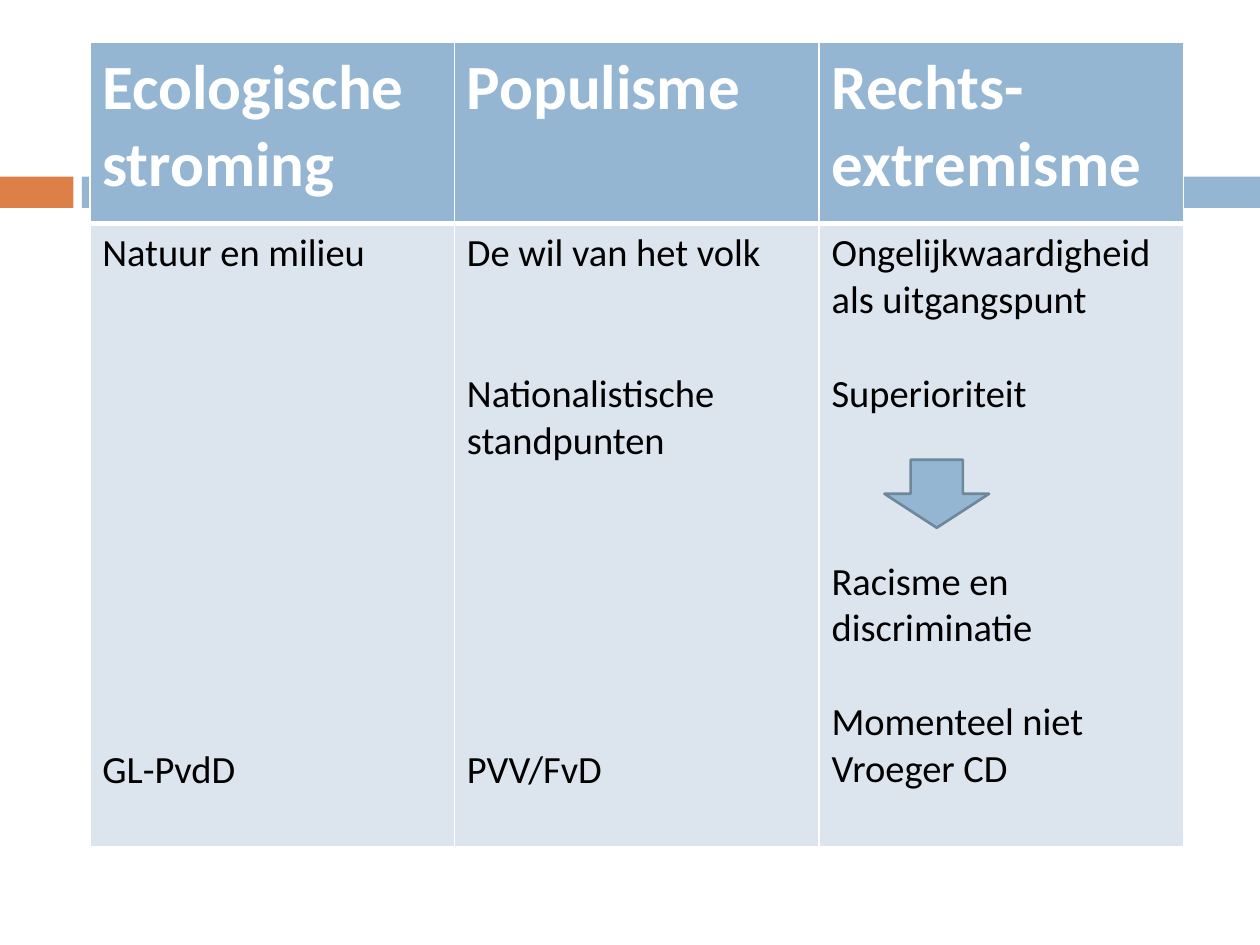
"""Build a slide that compares three political movements in a table."""
from lxml import etree
from pptx import Presentation
from pptx import util as u
from pptx.dml.color import RGBColor
from pptx.enum import shapes
from pptx.oxml import ns

COLORS = {"orange": "DD8047", "blue": "94B6D2", "pale": "DCE5EE",
          "edge": "6D879B", "white": "FFFFFF", "black": "000000"}
LINE_PITCH = 26.86
COLUMNS = [
    ("Ecologische stroming", [(0, "Natuur en milieu"), (10, "GL-PvdD")]),
    ("Populisme", [(0, "De wil van het volk"),
                   (2, "Nationalistische standpunten"), (6, "PVV/FvD")]),
    ("Rechts-extremisme", [(0, "Ongelijkwaardigheid als uitgangspunt"),
                           (1, "Superioriteit"),
                           (3, "Racisme en discriminatie"),
                           (1, "Momenteel niet"), (0, "Vroeger CD")]),
]


def add_block(kind, left, top, width, height, color):
    block = slide.shapes.add_shape(kind, u.Cm(left), u.Cm(top), u.Cm(width), u.Cm(height))
    block.shadow.inherit = False
    block.fill.solid()
    block.fill.fore_color.rgb = RGBColor.from_string(COLORS[color])
    block.line.fill.background()
    return block


def fill_cell(cell, lines, size, color, bold, fill, borders):
    cell.text_frame.text = "\n".join(text for gap, text in lines)
    for para, (gap, text) in zip(cell.text_frame.paragraphs, lines):
        para.space_before = u.Pt(gap * LINE_PITCH)
        font = para.runs[0].font
        font.name, font.size, font.bold = "Calibri", u.Pt(size), bold
        font.color.rgb = RGBColor.from_string(COLORS[color])
    properties = cell._tc.get_or_add_tcPr()
    for side, width in borders.items():
        line = etree.SubElement(properties, ns.qn("a:ln" + side), w=str(u.Pt(width)))
        solid = etree.SubElement(line, ns.qn("a:solidFill"))
        etree.SubElement(solid, ns.qn("a:srgbClr"), val=COLORS["white"])
    cell.fill.solid()
    cell.fill.fore_color.rgb = RGBColor.from_string(COLORS[fill])


deck = Presentation()
deck.slide_width, deck.slide_height = u.Cm(25.4), u.Cm(19.05)
slide = deck.slides.add_slide(deck.slide_layouts[6])

add_block(shapes.MSO_SHAPE.RECTANGLE, 0, 3.56, 1.48, 0.63, "orange")
add_block(shapes.MSO_SHAPE.RECTANGLE, 1.65, 3.56, 23.75, 0.63, "blue")

frame = slide.shapes.add_table(2, len(COLUMNS), u.Cm(1.81), u.Cm(0.86), u.Cm(22.05), u.Cm(16.2))
table = frame.table
table.rows[0].height, table.rows[1].height = u.Cm(3.65), u.Cm(12.55)
for index, (heading, lines) in enumerate(COLUMNS):
    table.columns[index].width = u.Cm(7.35)
    fill_cell(table.cell(0, index), [(0, heading)], 36, "white", True, "blue",
              {"L": 1, "R": 1, "T": 1, "B": 3})
    fill_cell(table.cell(1, index), lines, 22, "black", False, "pale",
              {"L": 1, "R": 1, "T": 3, "B": 1})

arrow = add_block(shapes.MSO_SHAPE.DOWN_ARROW, 17.83, 9.27, 2.11, 1.37, "blue")
arrow.line.color.rgb = RGBColor.from_string(COLORS["edge"])
arrow.line.width = u.Pt(1.5)

deck.save("out.pptx")
